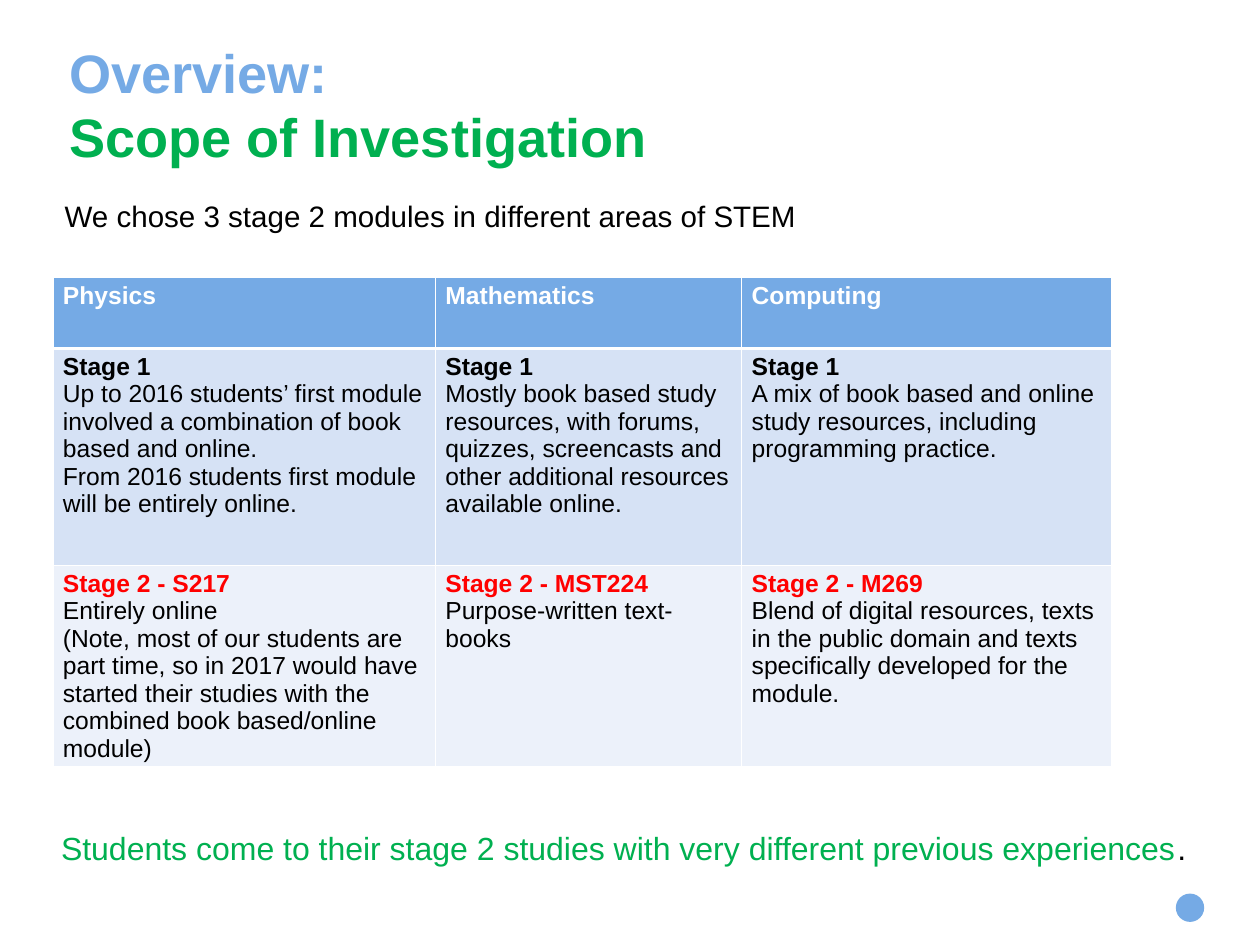
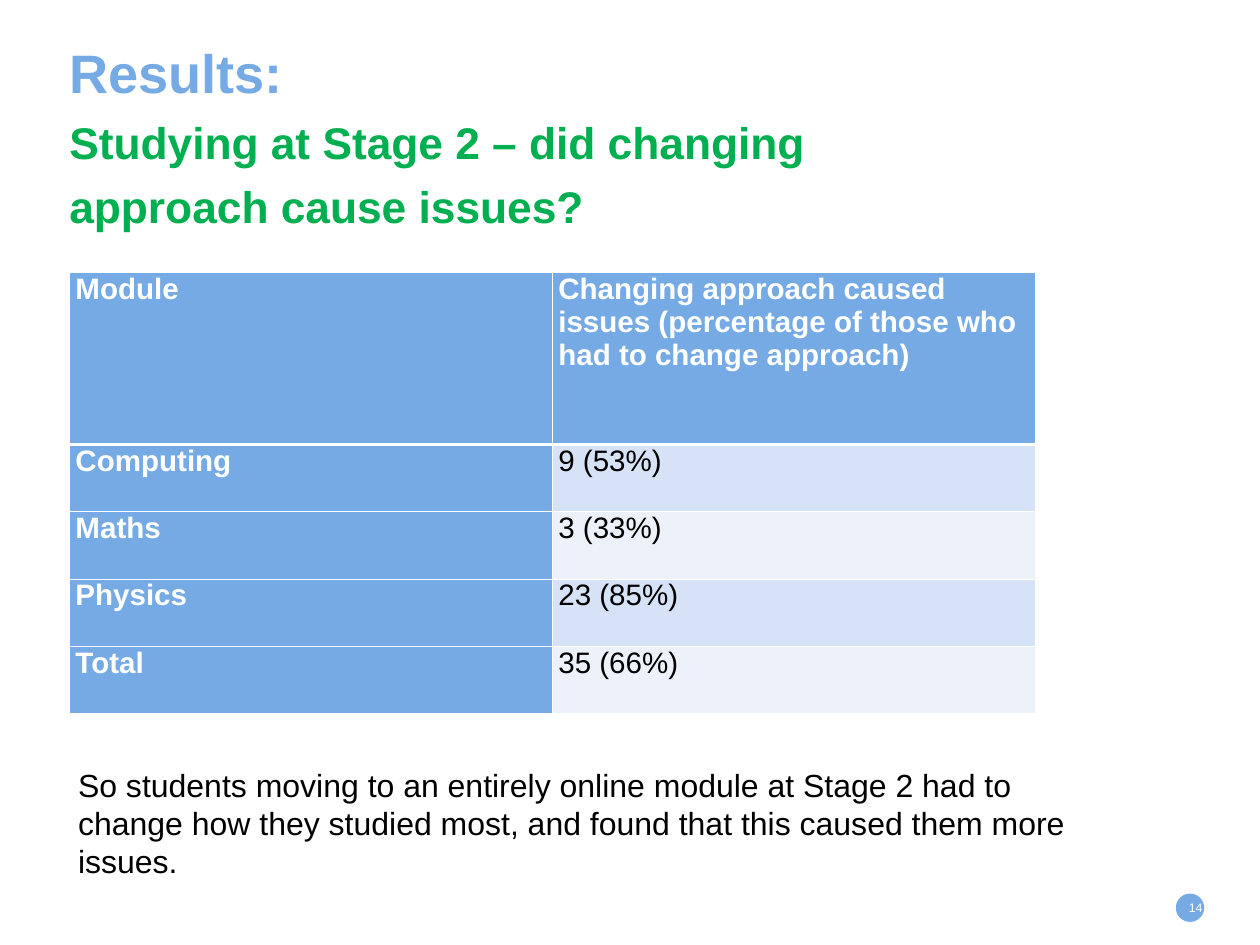
from lxml import etree
from pptx import Presentation
from pptx import util as u
from pptx.dml.color import RGBColor
from pptx.enum import shapes, text
from pptx.oxml import ns

WIDTH, HEIGHT = 14.22, 10.67
FONT = "Arial"
COLORS = {"blue": "75AAE5", "green": "00B050", "red": "FF0000", "black": "000000",
          "white": "FFFFFF", "band": "D6E2F5", "pale": "ECF1FA"}


def place(left, top, width, height):
    """Turn percentages of the slide's size into a box of lengths."""
    return [u.Inches(share * side / 100) for share, side in
            zip((left, top, width, height), (WIDTH, HEIGHT, WIDTH, HEIGHT))]


def style(font, size, color, bold=False):
    """Set the look of a paragraph or a run."""
    font.name, font.size, font.bold = FONT, u.Pt(size), bold
    font.color.rgb = RGBColor.from_string(COLORS[color])


def set_insets(part, across, down):
    """Set the margins of a text frame or a table cell, in inches."""
    part.margin_left = part.margin_right = u.Inches(across)
    part.margin_top = part.margin_bottom = u.Inches(down)


def move(placeholder, box):
    """Move a placeholder and return its frame, set from the top without insets."""
    placeholder.left, placeholder.top, placeholder.width, placeholder.height = place(*box)
    frame = placeholder.text_frame
    frame.auto_size = text.MSO_AUTO_SIZE.NONE
    frame.vertical_anchor = text.MSO_ANCHOR.TOP
    set_insets(frame, 0, 0)
    return frame


def add_title(slide, box, topic, heading, heading_size):
    """Write the blue topic line and the green heading below it."""
    line = move(slide.shapes.title, box).paragraphs[0]
    line.alignment = text.PP_ALIGN.LEFT
    line.line_spacing = u.Pt(52)
    topic_run = line.add_run()
    topic_run.text = topic
    style(topic_run.font, 44, "blue", True)
    line.add_line_break()
    heading_run = line.add_run()
    heading_run.text = heading
    style(heading_run.font, heading_size, "green", True)


def add_intro(slide, box, sentence):
    """Write the introduction in the body placeholder, without a bullet."""
    intro = move(slide.placeholders[1], box).paragraphs[0]
    intro.text = sentence
    properties = intro._p.get_or_add_pPr()
    properties.set("marL", "0")
    properties.set("indent", "0")
    etree.SubElement(properties, ns.qn("a:buNone"))
    intro.space_before = u.Pt(0)
    style(intro.font, 24, "black")


def add_note(slide, box, sentence, size, color):
    """Add a wrapped text box and return its frame."""
    frame = slide.shapes.add_textbox(*place(*box)).text_frame
    frame.word_wrap = True
    frame.paragraphs[0].text = sentence
    style(frame.paragraphs[0].font, size, color)
    return frame


def add_borders(cell, row):
    """Draw white cell borders, thicker under the header row."""
    properties = cell._tc.get_or_add_tcPr()
    points = {"lnL": 1, "lnR": 1, "lnT": 3 if row == 1 else 1, "lnB": 3 if row == 0 else 1}
    for side, width in points.items():
        line = etree.SubElement(properties, ns.qn(f"a:{side}"), w=str(u.Pt(width)))
        fill = etree.SubElement(line, ns.qn("a:solidFill"))
        etree.SubElement(fill, ns.qn("a:srgbClr"), val=COLORS["white"])


def add_grid(slide, box, columns, rows, content, size, insets, cell_look):
    """Add a table whose column and row shares fill the box."""
    left, top, width, height = place(*box)
    table = slide.shapes.add_table(len(rows), len(columns), left, top, width, height).table
    table.first_row = table.horz_banding = False
    for column, share in zip(table.columns, columns):
        column.width = int(width * share / sum(columns))
    for row, share in zip(table.rows, rows):
        row.height = int(height * share / sum(rows))
    for r, entries in enumerate(content):
        for c, entry in enumerate(entries):
            cell = table.cell(r, c)
            set_insets(cell, *insets)
            add_borders(cell, r)
            fill, looks = cell_look(r, c)
            cell.fill.solid()
            cell.fill.fore_color.rgb = RGBColor.from_string(COLORS[fill])
            cell.text = entry
            for i, paragraph in enumerate(cell.text_frame.paragraphs):
                style(paragraph.font, size, *looks[min(i, len(looks) - 1)])


def module_look(row, column):
    """Give fill and paragraph looks in the table of modules."""
    return [("blue", [("white", True)]),
            ("band", [("black", True), ("black", False)]),
            ("pale", [("red", True), ("black", False)])][row]


def result_look(row, column):
    """Give fill and paragraph looks in the table of results."""
    if row == 0 or column == 0:
        return "blue", [("white", True)]
    return "band" if row % 2 else "pale", [("black", False)]


def add_master_dot(prs, slide):
    """Put the page number dot on the slide master."""
    dot = slide.shapes.add_shape(shapes.MSO_SHAPE.OVAL, *place(93.32, 94.56, 2.25, 3))
    dot.shadow.inherit = False
    dot.fill.solid()
    dot.fill.fore_color.rgb = RGBColor.from_string(COLORS["blue"])
    dot.line.fill.background()
    dot.element.nvSpPr.cNvPr.set("id", "20")
    prs.slide_master.shapes.element.append(dot.element)


def build_scope(slide):
    """Build the overview of the three modules."""
    add_title(slide, (5.5, 4.3, 73.35, 15.2), "Overview:", "Scope of Investigation", 44)
    add_intro(slide, (5.13, 21, 89.8, 35.05),
              "We chose 3 stage 2 modules in different areas of STEM")
    modules = [
        ("Physics", "Mathematics", "Computing"),
        ("Stage 1\nUp to 2016 students’ first module involved a combination of book based "
         "and online.\nFrom 2016 students first module will be entirely online.",
         "Stage 1\nMostly book based study resources, with forums, quizzes, screencasts and "
         "other additional resources available online.",
         "Stage 1\nA mix of book based and online study resources, including programming "
         "practice."),
        ("Stage 2 - S217\nEntirely online\n(Note, most of our students are part time, so in "
         "2017 would have started their studies with the combined book based/online module)",
         "Stage 2 - MST224\nPurpose-written text-books",
         "Stage 2 - M269\nBlend of digital resources, texts in the public domain and texts "
         "specifically developed for the module."),
    ]
    add_grid(slide, (4.22, 29.4, 84.04, 51.36), (4.32, 3.46, 4.18), (0.8, 2.45, 2.23),
             modules, 20, (0.11, 0.05), module_look)
    closing = add_note(
        slide, (4.15, 87.25, 93.04, 5.06),
        "Students come to their stage 2 studies with very different previous experiences",
        26, "green")
    full_stop = closing.paragraphs[0].add_run()
    full_stop.text = "."
    style(full_stop.font, 26, "black")


def build_results(slide):
    """Build the results by module."""
    add_title(slide, (5.5, 4.3, 73.35, 23.4), "Results:",
              "Studying at Stage 2 – did changing approach cause issues?", 36)
    results = [
        ("Module",
         "Changing approach caused issues (percentage of those who had to change approach)"),
        ("Computing", "9 (53%)"),
        ("Maths", "3 (33%)"),
        ("Physics", "23 (85%)"),
        ("Total", "35 (66%)"),
    ]
    add_grid(slide, (5.5, 28.87, 76.65, 46.67), (1, 1), (1.94, 0.76, 0.76, 0.76, 0.76),
             results, 24, (0.07, 0), result_look)
    number = add_note(slide, (92.55, 93.35, 3.87, 5.34), "14", 10, "white")
    set_insets(number, 0.14, 0.07)
    number.vertical_anchor = text.MSO_ANCHOR.MIDDLE
    number.paragraphs[0].alignment = text.PP_ALIGN.RIGHT
    add_note(slide, (5.5, 80.5, 82.42, 13.2),
             "So students moving to an entirely online module at Stage 2 had to change how "
             "they studied most, and found that this caused them more issues.", 26, "black")


def main():
    """Build and save the presentation."""
    prs = Presentation()
    prs.slide_width, prs.slide_height = u.Inches(WIDTH), u.Inches(HEIGHT)
    scope = prs.slides.add_slide(prs.slide_layouts[1])
    add_master_dot(prs, scope)
    build_scope(scope)
    build_results(prs.slides.add_slide(prs.slide_layouts[5]))
    prs.save("out.pptx")


if __name__ == "__main__":
    main()
